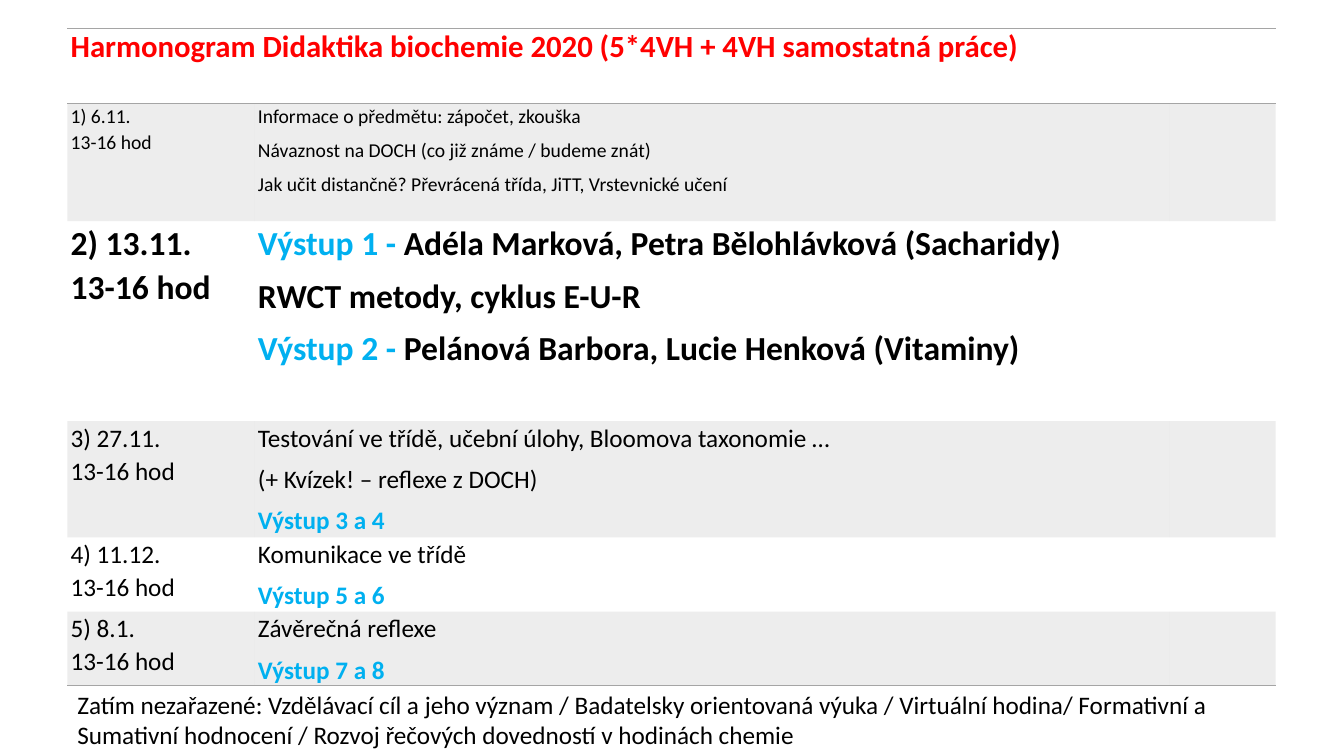
from lxml import etree
from pptx import Presentation
from pptx.dml.color import RGBColor
from pptx.enum.text import MSO_ANCHOR
from pptx.oxml.ns import qn
from pptx.util import Cm, Pt

TOP = MSO_ANCHOR.TOP
FONT = "Calibri"
PLAIN = "{2D5ABB26-0587-4C30-8999-92F81FD0307C}"
HUES = {"red": "FF0000", "blue": "00B0F0", "black": "000000", "gray": "A5A5A5"}
HEAD = "Harmonogram Didaktika biochemie 2020 (5*4VH + 4VH samostatná práce)"
NOTE = ("Zatím nezařazené: Vzdělávací cíl a jeho význam / Badatelsky orientovaná "
        "výuka / Virtuální hodina/ Formativní a Sumativní hodnocení / Rozvoj "
        "řečových dovedností v hodinách chemie")
HOURS = "13-16 hod"
COLS = [4.72, 23.06, 2.67]
ROWS = [1.89, 2.97, 5.04, 2.93, 1.87, 1.87]

PLAN = [
    ("1) 6.11.", 14, False, [
        [("Informace o předmětu: zápočet, zkouška", "black")],
        [("Návaznost na DOCH (co již známe / budeme znát)", "black")],
        [("Jak učit distančně? Převrácená třída, JiTT, Vrstevnické učení", "black")]]),
    ("2) 13.11.", 24, True, [
        [("Výstup 1 - ", "blue"),
         ("Adéla Marková, Petra Bělohlávková (Sacharidy)", "black")],
        [("RWCT metody, cyklus E-U-R", "black")],
        [("Výstup 2 - ", "blue"),
         ("Pelánová Barbora, Lucie Henková (Vitaminy)", "black")]]),
    ("3) 27.11.", 18, False, [
        [("Testování ve třídě, učební úlohy, Bloomova taxonomie …", "black")],
        [("(+ Kvízek! – reflexe z DOCH)", "black")],
        [("Výstup 3 a 4", "blue")]]),
    ("4) 11.12.", 18, False, [
        [("Komunikace ve třídě", "black")],
        [("Výstup 5 a 6", "blue")]]),
    ("5) 8.1.", 18, False, [
        [("Závěrečná reflexe", "black")],
        [("Výstup 7 a 8", "blue")]]),
]


def write(frame, lines, size, bold=False, after=0, pitch=None):
    for i, line in enumerate(lines):
        para = frame.add_paragraph() if i else frame.paragraphs[0]
        para.space_after = Pt(after)
        para.line_spacing = pitch
        for text, hue in line:
            run = para.add_run()
            run.text = text
            font = run.font
            font.name, font.size = FONT, Pt(size)
            font.bold = bold or hue == "blue"
            font.color.rgb = RGBColor.from_string(HUES[hue])


def rule(cell, side):
    props = cell._tc.get_or_add_tcPr()
    line = etree.SubElement(props, qn("a:" + side), w=str(Pt(1)))
    fill = etree.SubElement(line, qn("a:solidFill"))
    etree.SubElement(fill, qn("a:srgbClr"), val=HUES["gray"])


def shade(cell, tint):
    if not tint:
        cell.fill.background()
        return
    cell.fill.solid()
    cell.fill.fore_color.rgb = RGBColor.from_string(HUES["gray"])
    color = cell._tc.tcPr.find(".//" + qn("a:solidFill") + "/" + qn("a:srgbClr"))
    for found in cell._tc.tcPr.findall(qn("a:solidFill")):
        color = found[0]
    etree.SubElement(color, qn("a:alpha"), val="20000")


def style(table):
    table.first_row = table.horz_banding = False
    table._tbl.tblPr.find(qn("a:tableStyleId")).text = PLAIN
    for col, width in zip(table.columns, COLS):
        col.width = Cm(width)
    last = len(ROWS) - 1
    for i, row in enumerate(table.rows):
        row.height = Cm(ROWS[i])
        for cell in row.cells:
            cell.margin_left = cell.margin_right = Cm(0.08)
            cell.margin_top = cell.margin_bottom = 0
            cell.vertical_anchor = TOP
            if i == 0:
                rule(cell, "lnT")
            if i in (0, last):
                rule(cell, "lnB")
            shade(cell, i % 2)


def add_plan(slide, left, top, width, height):
    table = slide.shapes.add_table(
        len(ROWS), len(COLS), left, top, width, height).table
    style(table)
    head = table.cell(0, 0)
    head.merge(table.cell(0, len(COLS) - 1))
    write(head.text_frame, [[(HEAD, "red")]], 22, True)
    for i, (date, size, bold, topics) in enumerate(PLAN, 1):
        when = [[(date, "black")], [(HOURS, "black")]]
        write(table.cell(i, 0).text_frame, when, size, bold, pitch=1.07)
        write(table.cell(i, 1).text_frame, topics, size, bold, 6, 1.07)


def add_note(slide, left, top, width, height):
    frame = slide.shapes.add_textbox(left, top, width, height).text_frame
    frame.word_wrap = True
    write(frame, [[(NOTE, "black")]], 18)


def main():
    deck = Presentation()
    deck.slide_width, deck.slide_height = Cm(33.87), Cm(19.05)
    slide = deck.slides.add_slide(deck.slide_layouts[6])
    left, width = Cm(1.7), Cm(sum(COLS))
    add_plan(slide, left, Cm(0.71), width, Cm(sum(ROWS)))
    add_note(slide, left, Cm(17.25), width, Cm(1.8))
    deck.save("out.pptx")


if __name__ == "__main__":
    main()
